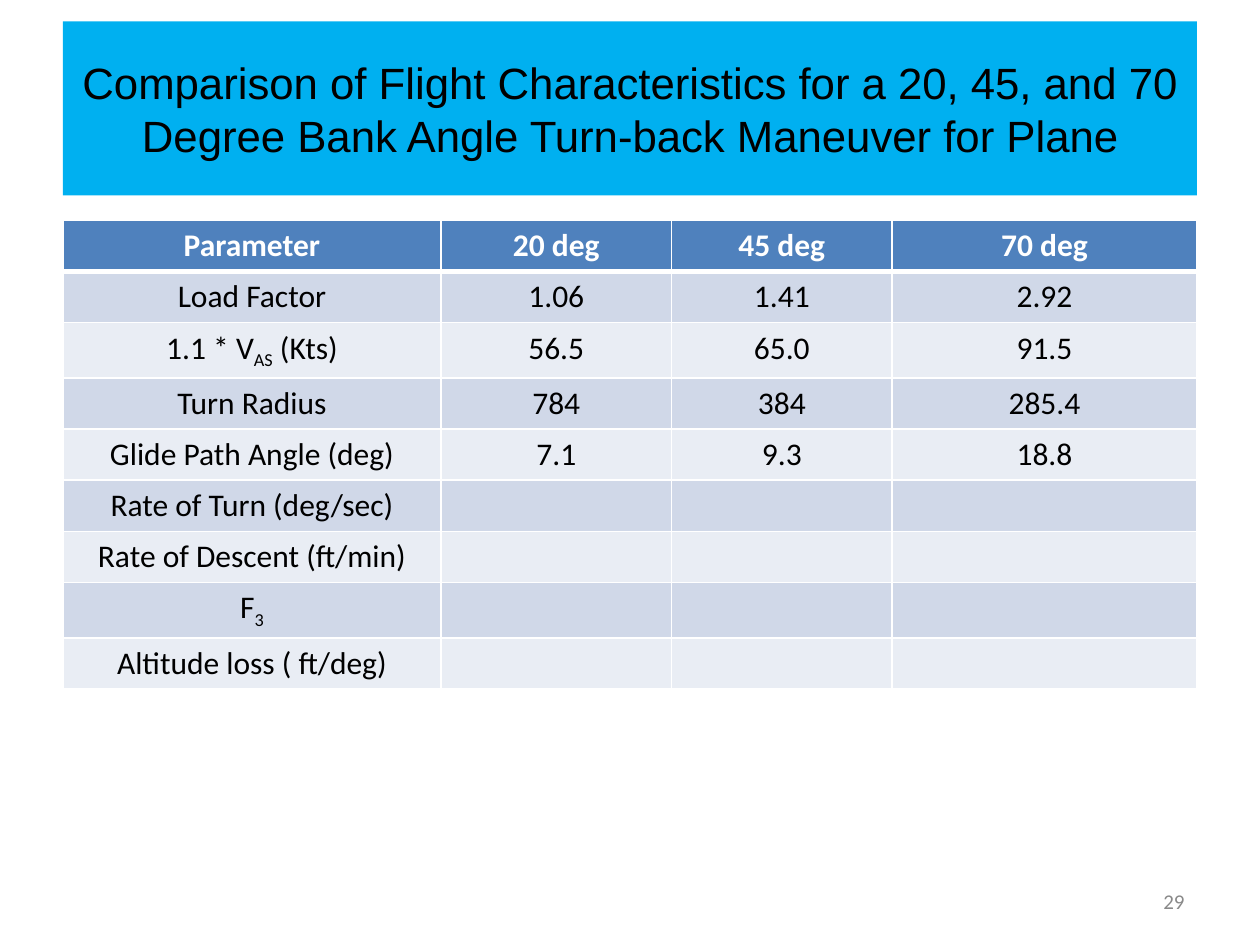
from dataclasses import dataclass

from lxml import etree
from pptx import Presentation
from pptx import util as u
from pptx.dml.color import RGBColor
from pptx.enum import shapes, text
from pptx.oxml import ns

HUES = {
    "sky": "00B0F0", "head": "4F81BD", "odd": "D0D8E8", "even": "E9EDF4",
    "ink": "000000", "rule": "FFFFFF", "gray": "898989",
}
WIDTHS = (3, 1.83, 1.75, 2.42)
HIGH = 0.4
ROWS = (
    ("Parameter", "20 deg", "45 deg", "70 deg"),
    ("Load Factor", "1.06", "1.41", "2.92"),
    ("1.1 * V_AS_ (Kts)", "56.5", "65.0", "91.5"),
    ("Turn Radius", "784", "384", "285.4"),
    ("Glide Path Angle (deg)", "7.1", "9.3", "18.8"),
    ("Rate of Turn (deg/sec)", "", "", ""),
    ("Rate of Descent (ft/min)", "", "", ""),
    ("F_3_", "", "", ""),
    ("Altitude loss ( ft/deg)", "", "", ""),
)


@dataclass
class Style:
    size: float
    hue: str
    face: str = "Calibri"
    bold: bool = False
    align: int = text.PP_ALIGN.CENTER


@dataclass
class Label:
    words: str
    left: float
    top: float
    width: float
    height: float
    style: Style
    fill: str = ""


LABELS = (
    Label("Comparison of Flight Characteristics for a 20, 45, and 70 "
          "Degree Bank Angle Turn-back Maneuver for Plane",
          0.5, 0.17, 9, 1.38, Style(25, "ink", "Arial"), "sky"),
    Label("29", 7.17, 6.95, 2.33, 0.4,
          Style(12, "gray", align=text.PP_ALIGN.RIGHT)),
)


def color(name: str) -> RGBColor:
    return RGBColor.from_string(HUES[name])


def write(frame, words: str, style: Style) -> None:
    para = frame.paragraphs[0]
    para.alignment = style.align
    for spot, part in enumerate(words.split("_")):
        if not part:
            continue
        run = para.add_run()
        run.text = part
        font = run.font
        font.size = u.Pt(style.size)
        font.name = style.face
        font.bold = style.bold
        font.color.rgb = color(style.hue)
        if spot % 2:
            font._element.set("baseline", "-25000")


def label(slide, item: Label) -> None:
    area = [u.Inches(n) for n in (item.left, item.top, item.width, item.height)]
    if item.fill:
        box = slide.shapes.add_shape(shapes.MSO_SHAPE.RECTANGLE, *area)
        box.shadow.inherit = False
        box.fill.solid()
        box.fill.fore_color.rgb = color(item.fill)
        box.line.fill.background()
    else:
        box = slide.shapes.add_textbox(*area)
    frame = box.text_frame
    frame.word_wrap = True
    frame.vertical_anchor = text.MSO_ANCHOR.MIDDLE
    write(frame, item.words, item.style)


def border(cell, side: str, width: float) -> None:
    props = cell._tc.get_or_add_tcPr()
    line = etree.SubElement(props, ns.qn(f"a:ln{side}"), w=str(u.Pt(width)))
    fill = etree.SubElement(line, ns.qn("a:solidFill"))
    etree.SubElement(fill, ns.qn("a:srgbClr"), val=HUES["rule"])


def table(slide) -> None:
    grid = slide.shapes.add_table(
        len(ROWS), len(WIDTHS), u.Inches(0.5), u.Inches(1.75),
        u.Inches(sum(WIDTHS)), u.Inches(HIGH * len(ROWS))).table
    for col, width in zip(grid.columns, WIDTHS):
        col.width = u.Inches(width)
    top = Style(18, "rule", bold=True)
    body = Style(18, "ink")
    for r, row in enumerate(ROWS):
        grid.rows[r].height = u.Inches(HIGH)
        fill = "head" if r == 0 else "odd" if r % 2 else "even"
        for c, words in enumerate(row):
            cell = grid.cell(r, c)
            thick = {"L": 1, "R": 1, "T": 3 if r == 1 else 1,
                     "B": 3 if r == 0 else 1}
            for side, width in thick.items():
                border(cell, side, width)
            cell.fill.solid()
            cell.fill.fore_color.rgb = color(fill)
            write(cell.text_frame, words, body if r else top)


def main() -> None:
    deck = Presentation()
    deck.slide_width = u.Inches(10)
    deck.slide_height = u.Inches(7.5)
    slide = deck.slides.add_slide(deck.slide_layouts[6])
    title, page = LABELS
    label(slide, title)
    table(slide)
    label(slide, page)
    deck.save("out.pptx")


if __name__ == "__main__":
    main()
